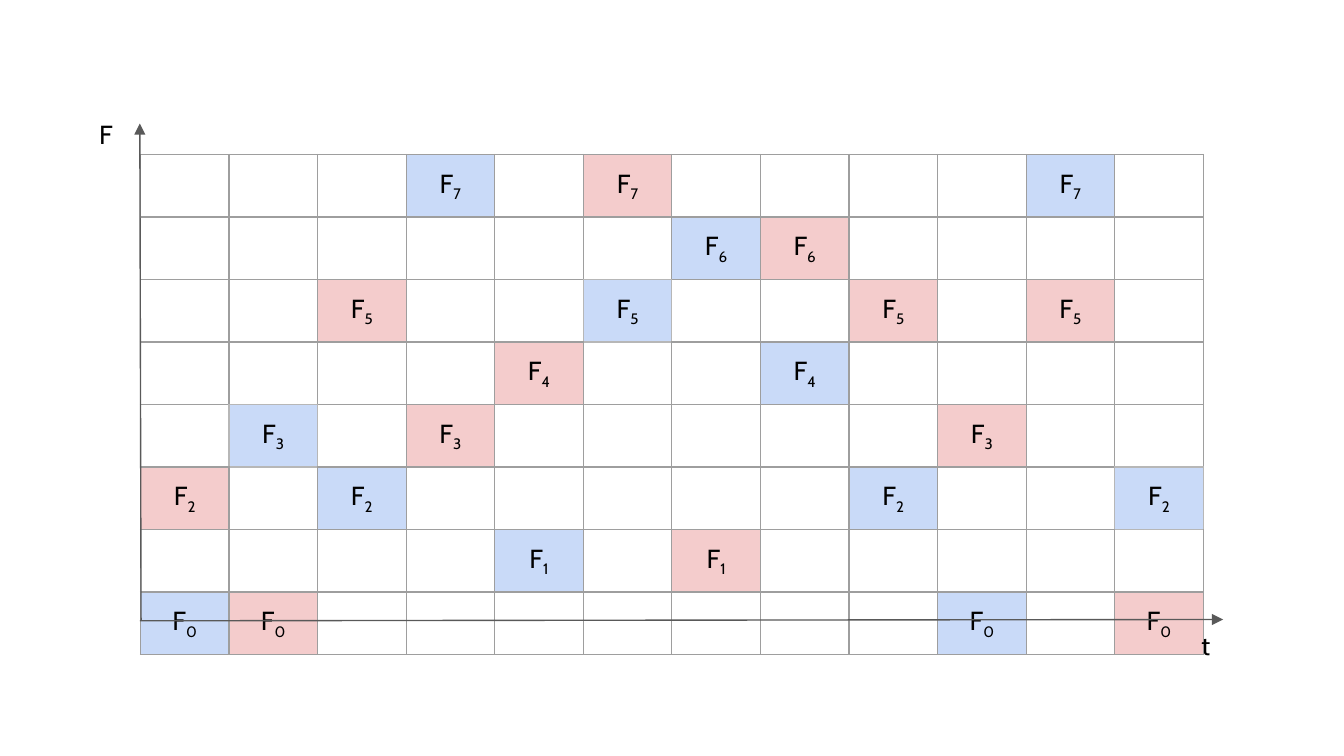
from lxml.etree import SubElement as add_element
from pptx import Presentation
from pptx.dml.color import RGBColor
from pptx.enum.shapes import MSO_CONNECTOR as Connector
from pptx.enum.text import PP_ALIGN as Align
from pptx.oxml.ns import qn
from pptx.util import Pt

FONT, TEXT_SIZE, INSET = "Cabin", 14, 7.2
BLACK, AXIS, GRID, LIGHT_GRID = "000000", "595959", "9E9E9E", "B7B7B7"
LINE_WIDTH = 0.75
LEFT, TOP, COLUMN_WIDTH, ROW_HEIGHT = 75.2, 82.8, 47.46, 30.24
FREQUENCIES = 8
HOPS = {
    "C9DAF8": [0, 3, 2, 7, 1, 5, 6, 4, 2, 0, 7, 2],
    "F4CCCC": [2, 0, 5, 3, 4, 7, 1, 6, 5, 3, 5, 0],
}
LIGHT_CELLS = {(2, 5), (4, 1), (5, 11)}
EDGES = {"lnL": (0, -1), "lnR": (0, 1), "lnT": (-1, 0), "lnB": (1, 0)}


def color(value):
    """Turn a hex string into a colour."""
    return RGBColor.from_string(value)


def style_paragraph(para, align):
    """Give a paragraph the common font and an alignment."""
    para.alignment = align
    para.font.name = FONT
    para.font.size = Pt(TEXT_SIZE)
    para.font.color.rgb = color(BLACK)


def set_insets(box):
    """Give a cell or text frame equal insets."""
    for side in ("left", "right", "top", "bottom"):
        setattr(box, f"margin_{side}", Pt(INSET))


def add_borders(cell, row, column):
    """Draw the four borders, lighter around the light cells."""
    properties = cell._tc.get_or_add_tcPr()
    for tag, (down, across) in EDGES.items():
        light = LIGHT_CELLS & {(row, column), (row + down, column + across)}
        line = add_element(properties, qn(f"a:{tag}"), w=str(Pt(LINE_WIDTH)))
        fill = add_element(line, qn("a:solidFill"))
        add_element(fill, qn("a:srgbClr"), val=LIGHT_GRID if light else GRID)


def fill_cell(cell, frequency, fill):
    """Colour a cell and write its frequency with a subscript."""
    cell.fill.solid()
    cell.fill.fore_color.rgb = color(fill)
    para = cell.text_frame.paragraphs[0]
    for text in ("F", str(frequency)):
        span = para.add_run()
        span.text = text
    span.font._element.set("baseline", "-25000")


def add_grid(page):
    """Add the frequency and time grid with both hop sequences."""
    columns = len(next(iter(HOPS.values())))
    table = page.shapes.add_table(
        FREQUENCIES, columns, Pt(LEFT), Pt(TOP),
        Pt(columns * COLUMN_WIDTH), Pt(FREQUENCIES * ROW_HEIGHT)).table
    table.first_row = table.horz_banding = False
    for column in table.columns:
        column.width = Pt(COLUMN_WIDTH)
    for row in table.rows:
        row.height = Pt(ROW_HEIGHT)
    for row in range(FREQUENCIES):
        for column in range(columns):
            cell = table.cell(row, column)
            set_insets(cell)
            add_borders(cell, row, column)
            cell.fill.background()
            para = cell.text_frame.paragraphs[0]
            style_paragraph(para, Align.CENTER)
            add_element(para._p, qn("a:endParaRPr"), sz=str(TEXT_SIZE * 100))
    for fill, sequence in HOPS.items():
        for column, frequency in enumerate(sequence):
            row = FREQUENCIES - 1 - frequency
            fill_cell(table.cell(row, column), frequency, fill)


def add_axis(page, start, end):
    """Add an axis line with an arrowhead at its end."""
    axis = page.shapes.add_connector(
        Connector.STRAIGHT, *(Pt(length) for length in start + end))
    axis.line.width = Pt(LINE_WIDTH)
    axis.line.color.rgb = color(AXIS)
    add_element(axis.line._get_or_add_ln(), qn("a:tailEnd"),
                type="triangle", w="med", len="med")
    add_element(axis._element.spPr, qn("a:effectLst"))


def add_label(page, text, left, top):
    """Add an axis label."""
    box = page.shapes.add_textbox(Pt(left), Pt(top), Pt(80), Pt(46.8))
    frame = box.text_frame
    frame.word_wrap = True
    set_insets(frame)
    para = frame.paragraphs[0]
    para.text = text
    style_paragraph(para, Align.LEFT)


def main():
    """Build the frequency hopping slide."""
    deck = Presentation()
    deck.slide_width, deck.slide_height = Pt(720), Pt(405)
    page = deck.slides.add_slide(deck.slide_layouts[6])
    add_grid(page)
    add_axis(page, (75.6, 332.2), (74.9, 66.2))
    add_axis(page, (74.9, 332.6), (655.2, 331.9))
    add_label(page, "F", 46.1, 56.2)
    add_label(page, "t", 636.5, 329.8)
    deck.save("out.pptx")


if __name__ == "__main__":
    main()
